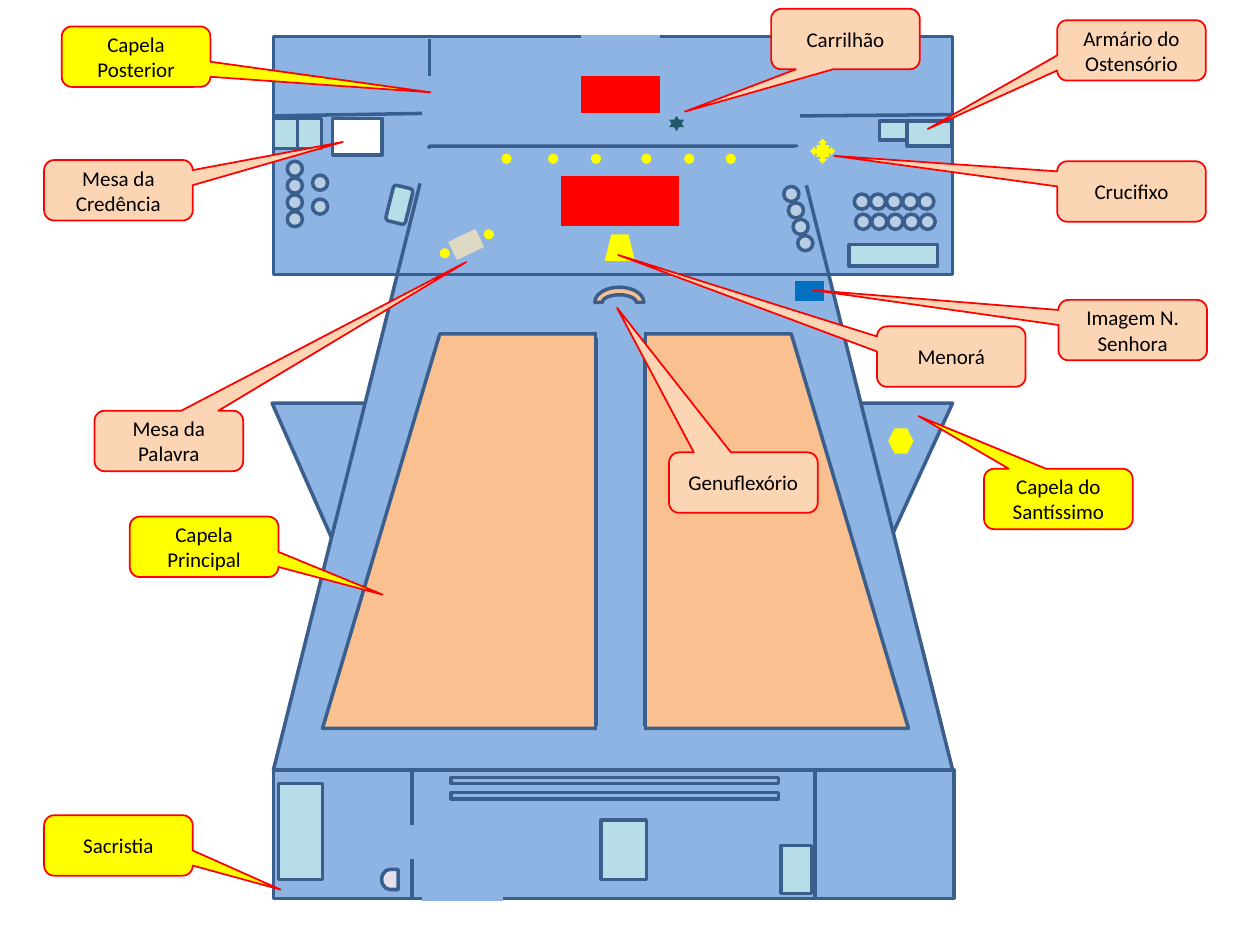
from dataclasses import dataclass

from lxml import etree
from pptx import Presentation
from pptx.dml.color import RGBColor
from pptx.enum.shapes import MSO_CONNECTOR, MSO_SHAPE
from pptx.enum.text import MSO_ANCHOR, PP_ALIGN
from pptx.oxml.ns import qn
from pptx.util import Inches, Pt

COLUMNS, ROWS = 1000, 750
SLIDE_WIDTH, SLIDE_HEIGHT = Inches(10), Inches(7.5)
FONT = "Calibri"
COLORS = {
    "floor": "8EB4E3", "outline": "3A5F8C", "wall": "376092",
    "pew": "FAC090", "wood": "B7DEE8", "seat": "B9CDE5",
    "altar": "FF0000", "gold": "FFFF00", "lectern": "DDD9C3",
    "statue": "0070C0", "bell": "215968", "basin": "E6E0EC",
    "cloth": "FFFFFF", "object": "FCD5B5", "place": "FFFF00",
    "border": "FF0000", "text": "000000",
}
PROCESS = MSO_SHAPE.FLOWCHART_PROCESS
MANUAL = MSO_SHAPE.FLOWCHART_MANUAL_OPERATION
DELAY = MSO_SHAPE.FLOWCHART_DELAY
RECTANGLE = MSO_SHAPE.RECTANGLE
ROUNDED = MSO_SHAPE.ROUNDED_RECTANGLE
OVAL = MSO_SHAPE.OVAL
TRIANGLE = MSO_SHAPE.RIGHT_TRIANGLE
TRAPEZOID = MSO_SHAPE.TRAPEZOID
HEXAGON = MSO_SHAPE.HEXAGON
ARC = MSO_SHAPE.BLOCK_ARC
CROSS = MSO_SHAPE.QUAD_ARROW_CALLOUT
STAR = MSO_SHAPE.STAR_6_POINT
CALLOUT = MSO_SHAPE.ROUNDED_RECTANGULAR_CALLOUT
STRAIGHT = MSO_CONNECTOR.STRAIGHT
MIDDLE, CENTER = MSO_ANCHOR.MIDDLE, PP_ALIGN.CENTER


def color(name):
    return RGBColor.from_string(COLORS[name])


def across(columns):
    return round(SLIDE_WIDTH * columns / COLUMNS)


def down(rows):
    return round(SLIDE_HEIGHT * rows / ROWS)


@dataclass
class Region:
    """A box on the slide grid; its parts are placed from its top left corner."""
    page: object
    left: float
    top: float
    width: float
    height: float

    def add(self, kind, place, fill, line="outline", weight=2, turn=0, mirrored=False):
        x, y, width, height = place
        shape = self.page.shapes.add_shape(
            kind, across(self.left + x), down(self.top + y), across(width), down(height))
        shape.shadow.inherit = False
        shape.fill.solid()
        shape.fill.fore_color.rgb = color(fill)
        if line:
            shape.line.color.rgb = color(line)
            shape.line.width = Pt(weight)
        else:
            shape.line.fill.background()
        shape.rotation = turn
        if mirrored:
            shape._element.spPr.xfrm.set("flipH", "1")
        return shape

    def fill_with(self, kind, fill, line="outline"):
        return self.add(kind, (0, 0, self.width, self.height), fill, line)

    def add_wall(self, x1, y1, x2, y2, line="wall", weight=2):
        wall = self.page.shapes.add_connector(
            STRAIGHT, across(self.left + x1), down(self.top + y1),
            across(self.left + x2), down(self.top + y2))
        wall.line.color.rgb = color(line)
        wall.line.width = Pt(weight)
        etree.SubElement(wall._element.spPr, qn("a:effectLst"))

    def add_opening(self, *ends):
        """Paint a gap in a wall with the floor colour."""
        self.add_wall(*ends, line="floor", weight=5)


def draw_side_chapels(region):
    region.add(TRIANGLE, (-56, 55, 197, 87), "floor", turn=270, mirrored=True)
    region.add(TRIANGLE, (407, 49, 181, 83), "floor", turn=90)
    region.add(HEXAGON, (488, 20, 20, 20), "gold", line=None)


def draw_nave(region):
    region.fill_with(TRAPEZOID, "floor")
    region.add(MANUAL, (39, 149, 465, 313), "pew", turn=180)
    region.add(PROCESS, (256, 149, 39, 313), "floor")
    region.add(PROCESS, (414, 107, 23, 16), "statue", line=None)
    region.add(ARC, (255, 112, 39, 24), "pew")
    for y in (149, 464):
        region.add_opening(294, y, 257, y)


def draw_vestibule(region):
    region.fill_with(PROCESS, "floor")
    for x in (0, 430):
        region.add(PROCESS, (x, 0, 110, region.height), "floor")
    for y in (6, 18):
        region.add(PROCESS, (141, y, 260, 5), "floor")
    for place in ((260, 40, 36, 47), (4, 11, 35, 76), (403, 60, 24, 38)):
        region.add(PROCESS, place, "wood")
    region.add(DELAY, (86, 79, 13, 16), "basin", mirrored=True)
    region.add_opening(182, 101, 118, 101)
    region.add_opening(110, 71, 110, 44)


def draw_seats(region):
    seats = [(405 + 3.7 * i, 119 + 13 * i) for i in range(4)]
    seats += [(11, 99 + 13.3 * i) for i in range(4)]
    seats += [(31, 110), (31, 129)]
    seats += [(461 + row + 12.8 * i, 125 + 16 * row) for row in range(2) for i in range(5)]
    for x, y in seats:
        region.add(OVAL, (x, y, 12, 12), "seat")


def draw_candles(region):
    candles = [(x, 93) for x in (181, 218, 252, 292, 326, 359)]
    for x, y in candles + [(167, 153), (132, 168)]:
        region.add(OVAL, (x, y, 8, 8), "gold", line=None)


def draw_sanctuary_contents(region):
    for place in ((228, 111, 94, 39), (244, 31, 63, 30)):
        region.add(PROCESS, place, "altar", line=None)
    region.add_wall(100, 189, 439, 189)
    region.add(PROCESS, (47, 65, 39, 29), "cloth")
    region.add_wall(0, 63, 118, 61)
    region.add_wall(418, 63, 538, 62)
    for place in ((0, 65, 19, 24), (19, 65, 19, 24), (481, 67, 23, 15),
                  (503, 67, 35, 20), (457, 165, 70, 17)):
        region.add(PROCESS, place, "wood")
    region.add(ROUNDED, (92, 119, 16, 29), "wood", turn=13.9)
    region.add(PROCESS, (141, 157, 24, 16), "lectern", line=None, turn=334.5)
    draw_seats(region)
    region.add(TRAPEZOID, (263, 157, 24, 21), "gold", line=None)
    region.add(CROSS, (426, 81, 20, 20), "gold", line=None)
    region.add(STAR, (314, 63, 12, 12), "bell", line=None)
    draw_candles(region)
    region.add_opening(123, 89, 115, 116)
    region.add_opening(415, 88, 423, 118)
    region.add_wall(124, 2, 124, 31)
    region.add_wall(417, 0, 417, 28)
    region.add_opening(307, 2, 244, 2)


def draw_label(region, text, fill, tip):
    """Draw a callout; tip is its distance from the centre, in widths and heights."""
    label = region.add(CALLOUT, (0, 0, region.width, region.height), fill, "border", 1)
    label.adjustments[0], label.adjustments[1] = tip
    frame = label.text_frame
    frame.word_wrap = True
    frame.vertical_anchor = MIDDLE
    frame.text = text
    para = frame.paragraphs[0]
    para.alignment = CENTER
    font = para.runs[0].font
    font.name, font.size = FONT, Pt(12)
    font.color.rgb = color("text")


LABELS = [
    ("Capela Posterior", "place", (49, 21), (1.98, 0.59)),
    ("Capela Principal", "place", (103, 410), (1.2, 0.79)),
    ("Sacristia", "place", (35, 647), (1.09, 0.73)),
    ("Armário do Ostensório", "object", (839, 16), (-1.37, 1.3)),
    ("Crucifixo", "object", (839, 128), (-2, -0.59)),
    ("Imagem N. Senhora", "object", (840, 238), (-2.15, -0.66)),
    ("Menorá", "object", (696, 259), (-2.24, -1.68)),
    ("Genuflexório", "object", (531, 359), (-0.85, -2.89)),
    ("Mesa da Credência", "object", (35, 127), (1.51, -0.8)),
    ("Carrilhão", "object", (612, 7), (-1.08, 1.2)),
    ("Mesa da Palavra", "object", (75, 326), (2, -2.96)),
    ("Capela do Santíssimo", "place", (781, 372), (-0.94, -1.37)),
]


def main():
    deck = Presentation()
    deck.slide_width, deck.slide_height = SLIDE_WIDTH, SLIDE_HEIGHT
    page = deck.slides.add_slide(deck.slide_layouts[6])
    left, width = 217, 539
    draw_side_chapels(Region(page, left, 320, width, 197))
    sanctuary = Region(page, left, 29, width, 189)
    sanctuary.fill_with(RECTANGLE, "floor", "wall")
    draw_nave(Region(page, left, 116, width, 495))
    draw_vestibule(Region(page, left, 611, width, 102))
    draw_sanctuary_contents(sanctuary)
    for text, fill, (x, y), tip in LABELS:
        draw_label(Region(page, x, y, 118, 48), text, fill, tip)
    deck.save("out.pptx")


if __name__ == "__main__":
    main()
